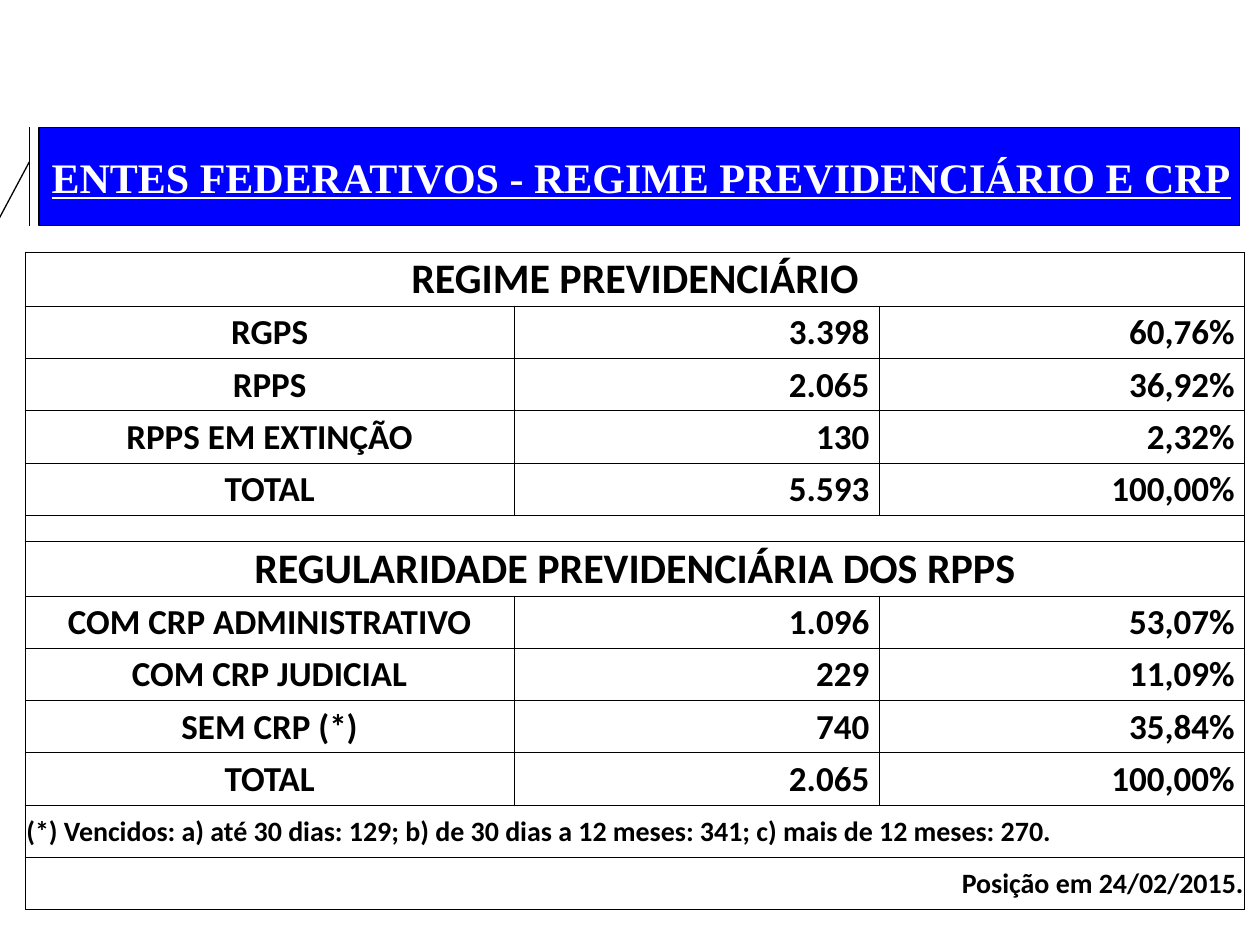
import pptx
import pptx.util
import pptx.dml.color
import pptx.enum.shapes
import pptx.enum.text
import pptx.oxml.ns
from lxml import etree

Inches = pptx.util.Inches
Pt = pptx.util.Pt
RGBColor = pptx.dml.color.RGBColor
ALIGN = pptx.enum.text.PP_ALIGN
ANCHOR = pptx.enum.text.MSO_ANCHOR
qn = pptx.oxml.ns.qn

BLUE = RGBColor(0x00, 0x00, 0xFF)
BLACK = RGBColor(0x00, 0x00, 0x00)
WHITE = RGBColor(0xFF, 0xFF, 0xFF)

COL_WIDTHS = [3.88, 2.9, 2.9]
HEADING_HEIGHT = 0.43
GAP_HEIGHT = 0.21
TABLE_HEIGHT = 5.22
ROWS = [
    ("heading", ["REGIME PREVIDENCIÁRIO"]),
    ("data", ["RGPS", "3.398", "60,76%"]),
    ("data", ["RPPS", "2.065", "36,92%"]),
    ("data", ["RPPS EM EXTINÇÃO", "130", "2,32%"]),
    ("data", ["TOTAL", "5.593", "100,00%"]),
    ("gap", [""]),
    ("heading", ["REGULARIDADE PREVIDENCIÁRIA DOS RPPS"]),
    ("data", ["COM CRP ADMINISTRATIVO", "1.096", "53,07%"]),
    ("data", ["COM CRP JUDICIAL", "229", "11,09%"]),
    ("data", ["SEM CRP (*)", "740", "35,84%"]),
    ("data", ["TOTAL", "2.065", "100,00%"]),
    ("note", ["(*) Vencidos: a) até 30 dias: 129; b) de 30 dias a 12 meses: 341; "
              "c) mais de 12 meses: 270."]),
    ("date", ["Posição em 24/02/2015."]),
]
SIZES = {"heading": 24, "data": 20, "gap": 10, "note": 16, "date": 16}
ALIGNS = {"heading": ALIGN.CENTER, "data": ALIGN.CENTER, "gap": ALIGN.LEFT,
          "note": ALIGN.LEFT, "date": ALIGN.RIGHT}


class Deck:
    """Holds the text style and the slide being built."""

    def __init__(self, prs):
        self.font = "Calibri"
        self.title_font = "Times New Roman"
        self.s = prs.slides.add_slide(prs.slide_layouts[5])

    def format(self, p, size, color, name):
        for r in p.runs:
            r.font.name = name
            r.font.size = Pt(size)
            r.font.bold = True
            r.font.color.rgb = color

    def callout(self, x, y, w, h, adjustments):
        kind = pptx.enum.shapes.MSO_SHAPE.LINE_CALLOUT_1_BORDER_AND_ACCENT_BAR
        sp = self.s.shapes.add_shape(kind, Inches(x), Inches(y), Inches(w), Inches(h))
        for i, value in enumerate(adjustments):
            sp.adjustments[i] = value
        sp.shadow.inherit = False
        sp.fill.solid()
        sp.fill.fore_color.rgb = BLUE
        sp.line.color.rgb = BLACK
        sp.line.width = Pt(0.75)

    def title(self, text, x, y, w, h):
        sp = self.s.shapes.title
        sp.left, sp.top, sp.width, sp.height = Inches(x), Inches(y), Inches(w), Inches(h)
        tf = sp.text_frame
        tf.text = text
        tf.word_wrap = True
        tf.auto_size = pptx.enum.text.MSO_AUTO_SIZE.SHAPE_TO_FIT_TEXT
        tf.vertical_anchor = ANCHOR.TOP
        p = tf.paragraphs[0]
        p.alignment = ALIGN.LEFT
        self.format(p, 24, WHITE, self.title_font)
        p.runs[0].font.underline = True
        self.s.shapes.element.append(sp.element)

    def borders(self, cell):
        tcPr = cell._tc.get_or_add_tcPr()
        for side in ("a:lnL", "a:lnR", "a:lnT", "a:lnB"):
            ln = etree.SubElement(tcPr, qn(side), w=str(Pt(0.5)))
            fill = etree.SubElement(ln, qn("a:solidFill"))
            etree.SubElement(fill, qn("a:srgbClr"), val=str(BLACK))

    def cell(self, cell, kind, text, numeric):
        cell.vertical_anchor = ANCHOR.MIDDLE
        cell.margin_left = cell.margin_top = Inches(0.01)
        cell.margin_right = Inches(0.08 if numeric else 0.01)
        cell.margin_bottom = 0
        self.borders(cell)
        if kind == "gap":
            cell.fill.background()
        else:
            cell.fill.solid()
            cell.fill.fore_color.rgb = WHITE
        p = cell.text_frame.paragraphs[0]
        p.text = text
        p.alignment = ALIGN.RIGHT if numeric else ALIGNS[kind]
        self.format(p, SIZES[kind], BLACK, self.font)
        if not text:
            etree.SubElement(p._p, qn("a:endParaRPr"), sz=str(SIZES["gap"] * 100))

    def table(self, x, y):
        kinds = [kind for kind, _ in ROWS]
        heights = {"heading": HEADING_HEIGHT, "gap": GAP_HEIGHT}
        special = [heights[kind] for kind in kinds if kind in heights]
        row_height = (TABLE_HEIGHT - sum(special)) / (len(ROWS) - len(special))
        table = self.s.shapes.add_table(
            len(ROWS), len(COL_WIDTHS), Inches(x), Inches(y),
            Inches(sum(COL_WIDTHS)), Inches(TABLE_HEIGHT)).table
        table.first_row = table.horz_banding = False
        for column, width in zip(table.columns, COL_WIDTHS):
            column.width = Inches(width)
        for i, (kind, texts) in enumerate(ROWS):
            table.rows[i].height = Inches(heights.get(kind, row_height))
            for j in range(len(COL_WIDTHS)):
                text = texts[j] if j < len(texts) else ""
                self.cell(table.cell(i, j), kind, text, kind == "data" and j > 0)
            if len(texts) == 1:
                table.cell(i, 0).merge(table.cell(i, len(COL_WIDTHS) - 1))


def main():
    prs = pptx.Presentation()
    prs.slide_width, prs.slide_height = Inches(10), Inches(7.5)
    deck = Deck(prs)
    deck.callout(0.31, 1.01, 9.53, 0.78, [0.351, -0.008, 1.13, -0.042])
    deck.title("ENTES FEDERATIVOS - REGIME PREVIDENCIÁRIO E CRP", 0.31, 1.15, 9.65, 0.5)
    deck.table(0.2, 2)
    prs.save("out.pptx")


if __name__ == "__main__":
    main()
